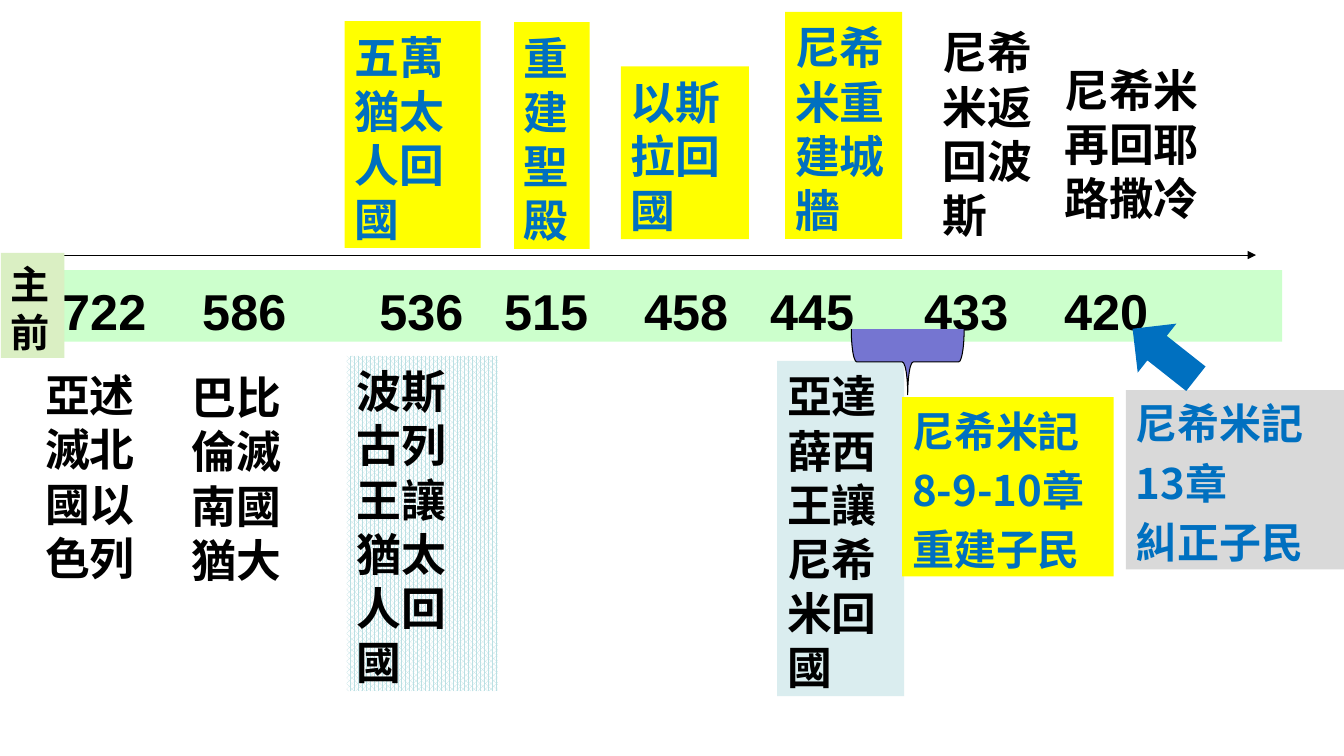
"""Build a timeline slide of the Jewish exile and return, 722 to 420 BC."""
from lxml import etree
from pptx import Presentation, util as u
from pptx.dml.color import RGBColor
from pptx.enum import dml, shapes, text
from pptx.oxml.ns import qn

THEME = {
    "cjk": "Noto Sans CJK SC", "latin": "Arial",
    "black": "000000", "blue": "0070C0", "yellow": "FFFF00", "band": "CCFFCC",
    "era": "DAEFC3", "pale": "DAEDEF", "grey": "D9D9D9", "brace": "7575D1",
    "pattern": "BBE0E3", "white": "FFFFFF",
    "event": 32, "era_size": 28, "note": 30, "year": 36,
    "pitch": 1.21, "drop": 0.06, "inset": 3.6, "note_gap": 6, "line": 0.75,
}

# year, tab position within the band
YEARS = [("722", 0), ("586", 100), ("536", 226.5), ("515", 315.7),
         ("458", 415.7), ("445", 505.7), ("433", 615.7), ("420", 715.7)]
BAND = (37.4, 193, 878.4, 51)
ARROW_LINE = (37.4, 182.2, 897.1, 182.2)

# paragraphs, left, top, width, lines, size, text colour, fill
LABELS = [
    (["亞述滅北國以色列"], 25.2, 257, 84.2, 4, "event", "black", None),
    (["巴比倫滅南國猶大"], 129.6, 258.5, 90, 4, "event", "black", None),
    (["波斯古列王讓猶太人回國"], 247.7, 254.2, 108, 6, "event", "black", "pattern"),
    (["五萬猶太人回國"], 246.2, 15.1, 97.2, 4, "event", "blue", "yellow"),
    (["重建聖殿"], 367.2, 15.8, 54, 4, "event", "blue", "yellow"),
    (["亞達薛西王讓尼希米回國"], 555.1, 257.8, 90.7, 6, "event", "black", "pale"),
    (["以斯拉回國"], 443.5, 47.5, 91.4, 3, "event", "blue", "yellow"),
    (["尼希米重建城牆"], 560.9, 8.6, 83.5, 4, "event", "blue", "yellow"),
    (["尼希米返回波斯"], 666, 12.2, 83.5, 4, "event", "black", None),
    (["尼希米再回耶路撒冷"], 753.1, 38.9, 113, 3, "event", "black", None),
    (["主前"], 0.7, 180.7, 45.4, 2, "era_size", "black", "era"),
    (["尼希米記", "8-9-10章", "重建子民"], 644.4, 283.7, 151.2, 3, "note", "blue", "yellow"),
    (["尼希米記", "13章", "糾正子民"], 804.2, 278.6, 156.2, 3, "note", "blue", "grey"),
]

# preset, frame, rotation, fill, outline
MARKERS = [
    (shapes.MSO_SHAPE.LEFT_ARROW, (802.8, 230.4, 57.6, 44.6), 38.3, "blue", None),
    (shapes.MSO_SHAPE.LEFT_BRACE, (625, 218.2, 46.8, 80.6), 270, "brace", "black"),
]


def color(name):
    return RGBColor.from_string(THEME[name])


def apply(target, values):
    for name, value in values.items():
        setattr(target, name, value)


def add_figure(slide, preset, frame, fill, outline=None):
    shape = slide.shapes.add_shape(preset, *map(u.Pt, frame))
    shape.shadow.inherit = False
    if fill is None:
        shape.fill.background()
    elif fill == "pattern":
        shape.fill.patterned()
        apply(shape.fill, {"pattern": dml.MSO_PATTERN.PERCENT_75})
        shape.fill.fore_color.rgb = color("pattern")
        shape.fill.back_color.rgb = color("white")
    else:
        shape.fill.solid()
        shape.fill.fore_color.rgb = color(fill)
    if outline:
        shape.line.color.rgb = color(outline)
        shape.line.width = u.Pt(THEME["line"])
    else:
        shape.line.fill.background()
    return shape


def prepare_frame(shape, top):
    frame = shape.text_frame
    apply(frame, {
        "word_wrap": True, "vertical_anchor": text.MSO_ANCHOR.TOP,
        "margin_left": u.Pt(7.2), "margin_right": u.Pt(7.2),
        "margin_top": u.Pt(top), "margin_bottom": u.Pt(0),
    })
    return frame


def add_words(paragraph, words, size, ink, typeface):
    paragraph.alignment = text.PP_ALIGN.LEFT
    run = paragraph.add_run()
    run.text = words
    apply(run.font, {"name": typeface, "size": u.Pt(THEME[size]), "bold": True})
    run.font.color.rgb = color(ink)
    latin = run.font._element.find(qn("a:latin"))
    east_asian = etree.Element(qn("a:ea"), typeface=THEME["cjk"])
    latin.addnext(east_asian)


def add_label(slide, paragraphs, left, top, width, lines, size, ink, fill):
    pitch = THEME[size] * THEME["pitch"]
    gaps = (len(paragraphs) - 1) * THEME["note_gap"]
    height = lines * pitch + gaps + 2 * THEME["inset"]
    shape = add_figure(slide, shapes.MSO_SHAPE.RECTANGLE, (left, top, width, height), fill)
    frame = prepare_frame(shape, THEME["inset"] + THEME["drop"] * THEME[size])
    for index, words in enumerate(paragraphs):
        paragraph = frame.add_paragraph() if index else frame.paragraphs[0]
        paragraph.line_spacing = u.Pt(round(pitch, 1))
        if index:
            paragraph.space_before = u.Pt(THEME["note_gap"])
        add_words(paragraph, words, size, ink, THEME["cjk"])


def add_timeline(slide):
    line = slide.shapes.add_connector(shapes.MSO_CONNECTOR.STRAIGHT, *map(u.Pt, ARROW_LINE))
    line.line.color.rgb = color("black")
    line.line.width = u.Pt(THEME["line"])
    etree.SubElement(line.line._get_or_add_ln(), qn("a:tailEnd"), type="triangle")
    etree.SubElement(line._element.spPr, qn("a:effectLst"))

    band = add_figure(slide, shapes.MSO_SHAPE.RECTANGLE, BAND, "band")
    paragraph = prepare_frame(band, 2 * THEME["inset"]).paragraphs[0]
    tabs = etree.SubElement(paragraph._p.get_or_add_pPr(), qn("a:tabLst"))
    for _, position in YEARS[1:]:
        etree.SubElement(tabs, qn("a:tab"), pos=str(u.Pt(position)), algn="l")
    add_words(paragraph, "\t".join(year for year, _ in YEARS), "year", "black", THEME["latin"])


def main():
    presentation = Presentation()
    apply(presentation, {"slide_width": u.Pt(960), "slide_height": u.Pt(540)})
    slide = presentation.slides.add_slide(presentation.slide_layouts[6])
    add_timeline(slide)
    for label in LABELS:
        add_label(slide, *label)
    for preset, frame, rotation, fill, outline in MARKERS:
        add_figure(slide, preset, frame, fill, outline).rotation = rotation
    presentation.save("out.pptx")


if __name__ == "__main__":
    main()
